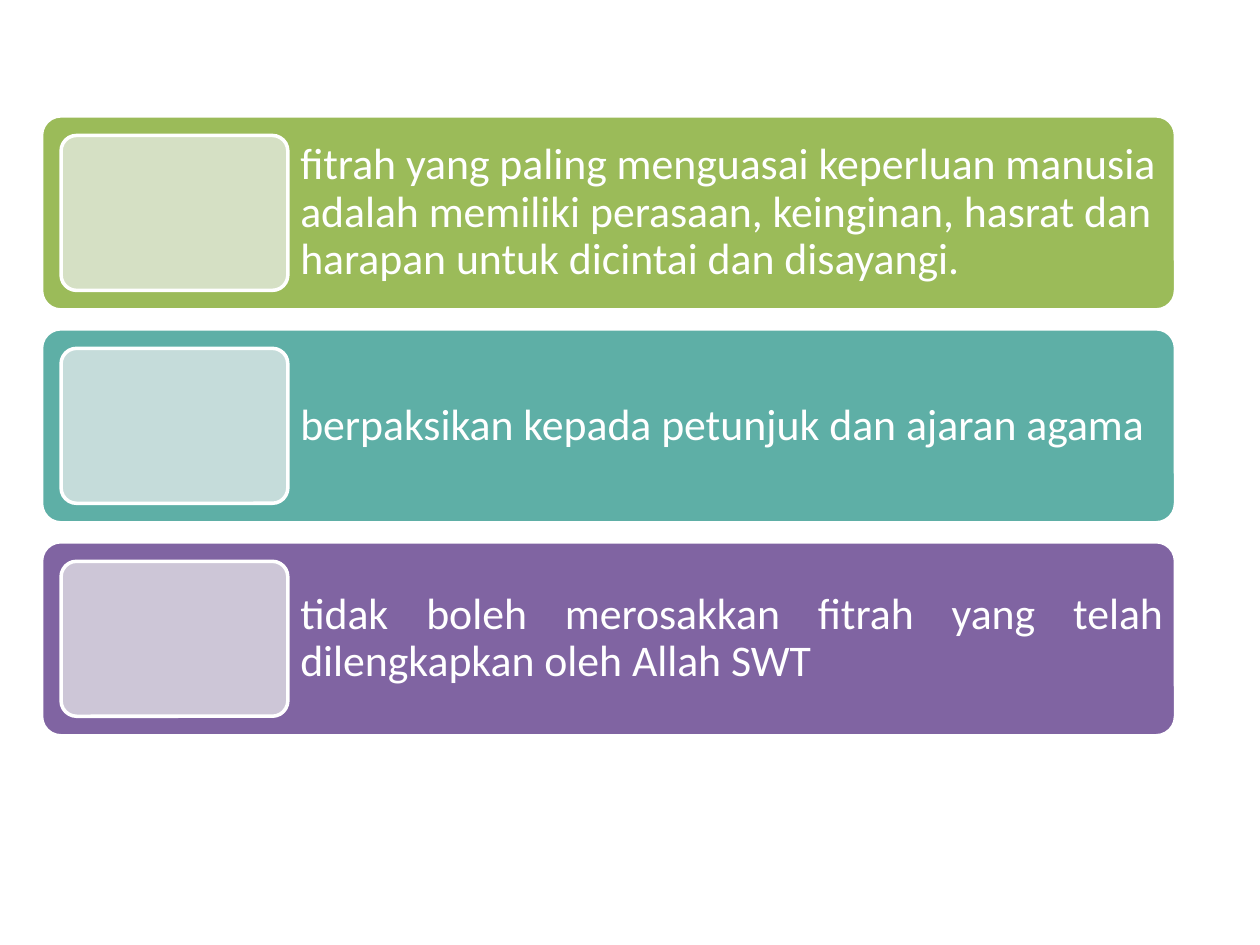
from dataclasses import dataclass

from pptx import Presentation
from pptx import util as u
from pptx.dml import color
from pptx.enum import shapes, text


@dataclass(frozen=True)
class Theme:
    font: str = "Calibri"
    size: float = 25
    white: str = "FFFFFF"
    outline: float = 2
    corner: float = 0.1
    inset: float = 0.1
    bands: tuple = (("9BBB59", "D5E0C4"), ("5EAFA6", "C5DCDA"), ("8064A2", "CDC6D7"))


class Painter:
    COLUMNS, ROWS = 10, 7.5

    def __init__(self, deck, theme):
        self.theme = theme
        self.column = deck.slide_width / self.COLUMNS
        self.row = deck.slide_height / self.ROWS
        self.slide = deck.slides.add_slide(deck.slide_layouts[6])

    def area(self, left, top, width, height):
        return (round(left * self.column), round(top * self.row),
                round(width * self.column), round(height * self.row))

    def panel(self, fill, *place):
        panel = self.slide.shapes.add_shape(
            shapes.MSO_SHAPE.ROUNDED_RECTANGLE, *self.area(*place))
        panel.adjustments[0] = self.theme.corner
        panel.shadow.inherit = False
        panel.fill.solid()
        panel.fill.fore_color.rgb = color.RGBColor.from_string(fill)
        panel.line.color.rgb = color.RGBColor.from_string(self.theme.white)
        panel.line.width = u.Pt(self.theme.outline)

    def label(self, words, align, *place):
        box = self.slide.shapes.add_textbox(*self.area(*place))
        frame = box.text_frame
        inset = u.Inches(self.theme.inset)
        frame_format = {
            "word_wrap": True, "vertical_anchor": text.MSO_ANCHOR.MIDDLE,
            "margin_left": inset, "margin_right": inset,
            "margin_top": inset, "margin_bottom": inset,
        }
        para = frame.paragraphs[0]
        span = para.add_run()
        span.text = words
        para_format = {"alignment": align, "line_spacing": 0.9}
        font_format = {"name": self.theme.font, "size": u.Pt(self.theme.size)}
        for target, values in ((frame, frame_format), (para, para_format),
                               (span.font, font_format)):
            for name, value in values.items():
                setattr(target, name, value)
        span.font.color.rgb = color.RGBColor.from_string(self.theme.white)


def main():
    deck = Presentation()
    deck.slide_width, deck.slide_height = u.Inches(10), u.Inches(7.5)
    theme = Theme()
    painter = Painter(deck, theme)
    left, top, width, height, pitch = 0.33, 0.92, 9, 1.54, 1.69
    pad, tile_width = 0.155, 1.8
    text_left = left + pad + tile_width
    statements = (
        ("fitrah yang paling menguasai keperluan manusia adalah memiliki perasaan, "
         "keinginan, hasrat dan harapan untuk dicintai dan disayangi.", text.PP_ALIGN.LEFT),
        ("berpaksikan kepada petunjuk dan ajaran agama", text.PP_ALIGN.LEFT),
        ("tidak boleh merosakkan fitrah yang telah dilengkapkan oleh Allah SWT",
         text.PP_ALIGN.JUSTIFY),
    )
    for index, ((words, align), (band, tile)) in enumerate(zip(statements, theme.bands)):
        band_top = top + index * pitch
        painter.panel(band, left, band_top, width, height)
        painter.label(words, align, text_left, band_top, left + width - text_left, height)
        painter.panel(tile, left + pad, band_top + pad, tile_width, height - 2 * pad)
    deck.save("out.pptx")


if __name__ == "__main__":
    main()
